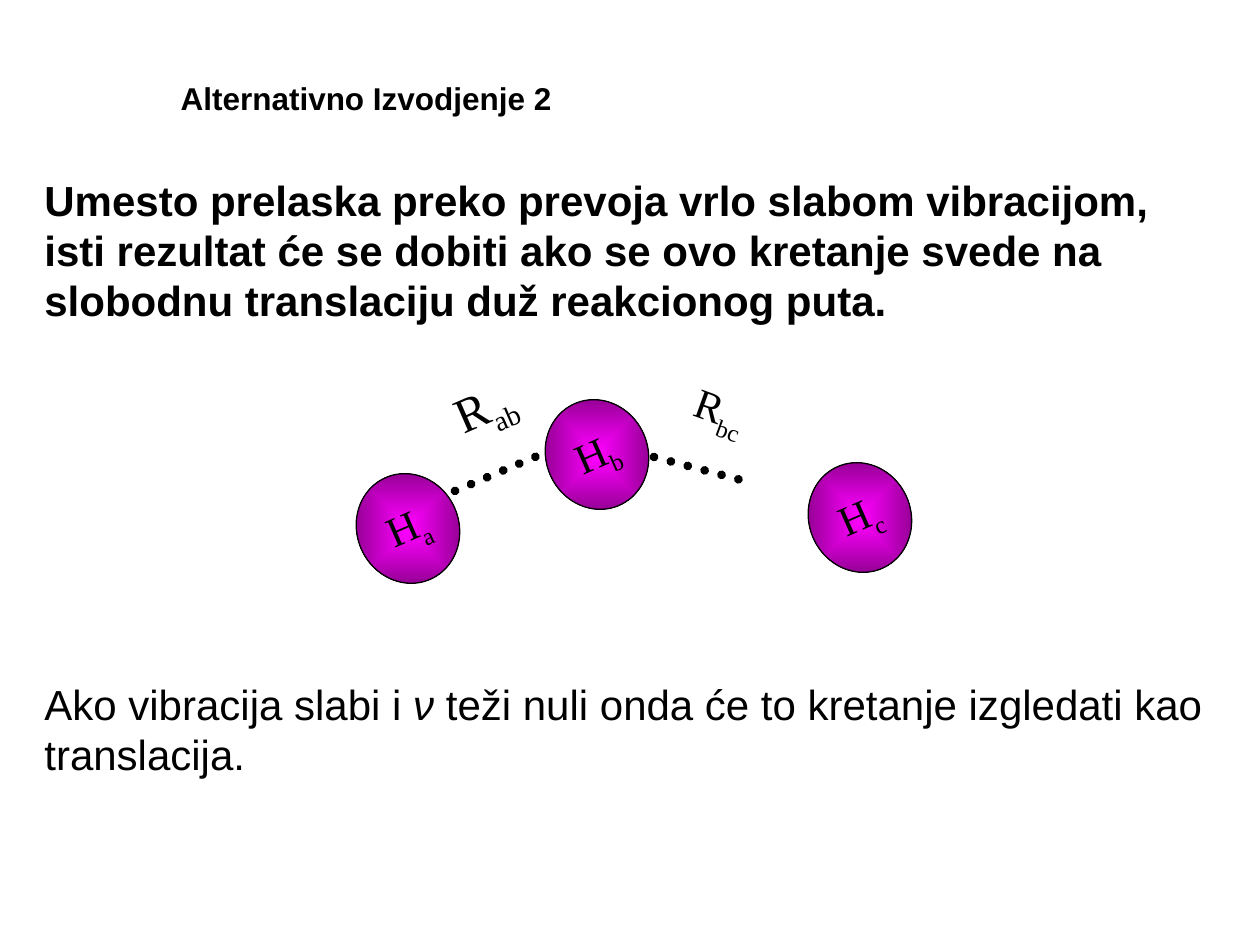
from lxml.etree import SubElement
from pptx import Presentation
from pptx.dml.color import RGBColor
from pptx.enum.dml import MSO_LINE as Dash
from pptx.enum.shapes import MSO_CONNECTOR as Link, MSO_SHAPE as Kind
from pptx.enum.text import MSO_ANCHOR as Anchor, MSO_AUTO_SIZE as Fit, PP_ALIGN as Align
from pptx.oxml.ns import qn
from pptx.util import Emu, Pt

SCALE = 914400 / 126
SANS = {"name": "Arial", "size": Pt(24)}
BOLD = {**SANS, "bold": True}
HEAD = {**BOLD, "size": Pt(18)}
SERIF = {"name": "Times New Roman", "size": Pt(24)}
LARGE = {**SERIF, "size": Pt(28)}
BLOCK = {"word_wrap": True, "auto_size": Fit.SHAPE_TO_FIT_TEXT, "vertical_anchor": Anchor.TOP}
LABEL = {**BLOCK, "word_wrap": False}
INNER = {"word_wrap": False, "vertical_anchor": Anchor.MIDDLE}
TILT = 336.4


def px(num):
    return Emu(round(num * SCALE))


def paint(color, code):
    color.rgb = RGBColor.from_string(code)


def apply(item, style):
    for key, value in style.items():
        setattr(item, key, value)


def write(shape, parts, font, frame, align=Align.LEFT):
    apply(shape.text_frame, frame)
    para = shape.text_frame.paragraphs[0]
    para.alignment = align
    for text, extra in parts:
        run = para.add_run()
        run.text = text
        apply(run.font, {**font, **extra})
        paint(run.font.color, "000000")
    return para


def lower(para):
    para.runs[-1].font._element.set("baseline", "-25000")


def add_head(slide, box, text):
    title = slide.shapes.title
    apply(title, dict(zip(("left", "top", "width", "height"), map(px, box))))
    write(title, [(text, {})], HEAD, BLOCK)


def add_text(slide, box, parts, font, frame=BLOCK):
    shape = slide.shapes.add_textbox(*map(px, box))
    return shape, write(shape, parts, font, frame)


def add_label(slide, box, turn, sub, font):
    shape, para = add_text(slide, box, [("R", {}), (sub, {})], font, LABEL)
    shape.rotation = turn
    lower(para)


def glow(fill, codes):
    fill.gradient()
    for stop, code in zip(fill.gradient_stops, codes):
        paint(stop.color, code)
    grad = fill._xPr.find(qn("a:gradFill"))
    grad.remove(grad.find(qn("a:lin")))
    path = SubElement(grad, qn("a:path"), {"path": "shape"})
    SubElement(path, qn("a:fillToRect"), dict.fromkeys("ltrb", "50000"))


def add_atom(slide, left, top, sub):
    atom = slide.shapes.add_shape(Kind.OVAL, *map(px, (left, top, 102, 111)))
    atom.shadow.inherit = False
    atom.rotation = TILT
    glow(atom.fill, ("FF00FF", "760076"))
    paint(atom.line.color, "000000")
    atom.line.width = Pt(0.75)
    lower(write(atom, [("H", {}), (sub, {})], SERIF, INNER, Align.CENTER))


def add_bond(slide, ends):
    bond = slide.shapes.add_connector(Link.STRAIGHT, *map(px, ends))
    paint(bond.line.color, "000000")
    apply(bond.line, {"width": Pt(5), "dash_style": Dash.ROUND_DOT})
    bond.line._ln.set("cap", "rnd")
    SubElement(bond._element.spPr, qn("a:effectLst"))


def main():
    deck = Presentation()
    deck.slide_width, deck.slide_height = px(1260), px(945)
    slide = deck.slides.add_slide(deck.slide_layouts[5])

    add_head(slide, (168, 73, 536, 50), "Alternativno Izvodjenje 2")
    add_text(slide, (32, 168, 1176, 164), [(
        "Umesto prelaska preko prevoja vrlo slabom vibracijom, "
        "isti rezultat će se dobiti ako se ovo kretanje svede na "
        "slobodnu translaciju duž reakcionog puta.", {})], BOLD)

    for left, top, sub in ((357, 473, "a"), (546, 399, "b"), (809, 462, "c")):
        add_atom(slide, left, top, sub)
    for ends in ((455, 491, 542, 454), (654, 457, 741, 480)):
        add_bond(slide, ends)
    add_label(slide, (441, 368, 89, 72), TILT, "ab", LARGE)
    add_label(slide, (683, 378, 79, 63), 19.8, "bc", SERIF)

    add_text(slide, (32, 672, 1228, 115), [
        ("Ako vibracija slabi i ", {}),
        ("ν ", {"italic": True}),
        ("teži nuli onda će to kretanje izgledati kao translacija.", {})], SANS)
    deck.save("out.pptx")


if __name__ == "__main__":
    main()
